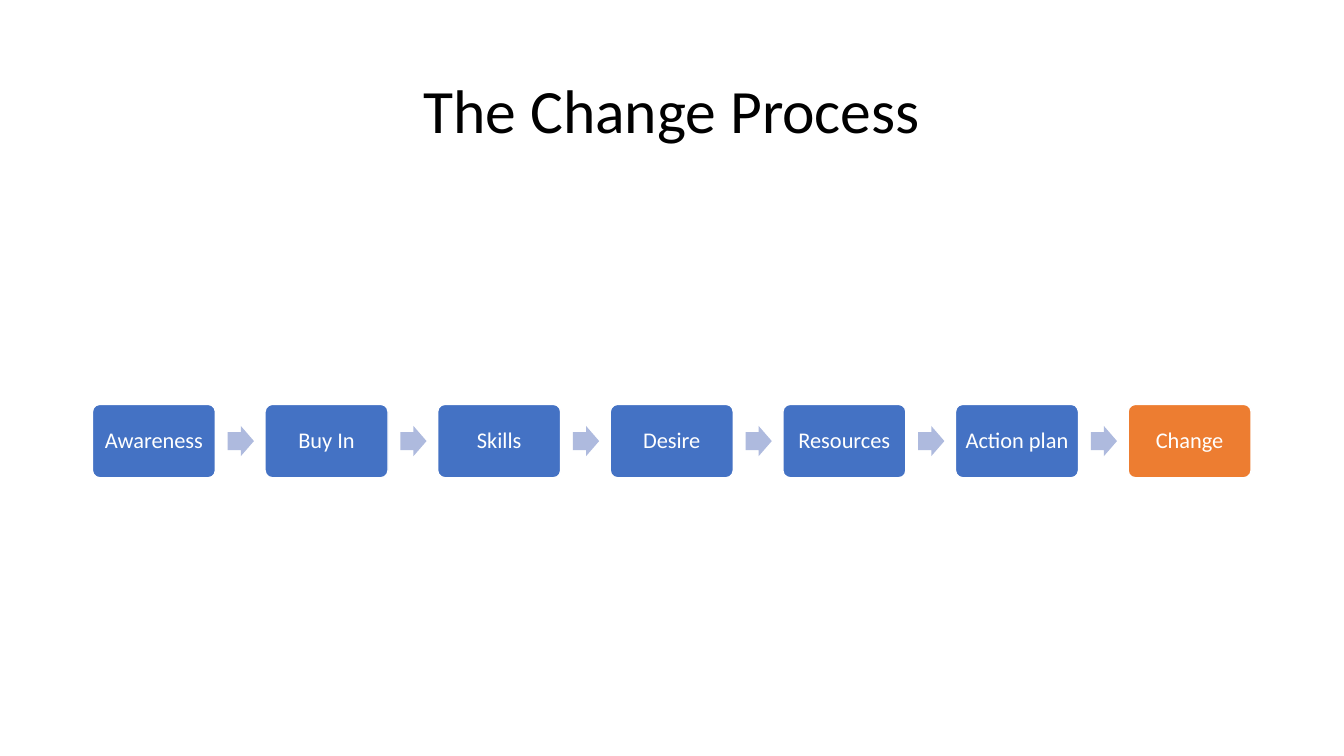
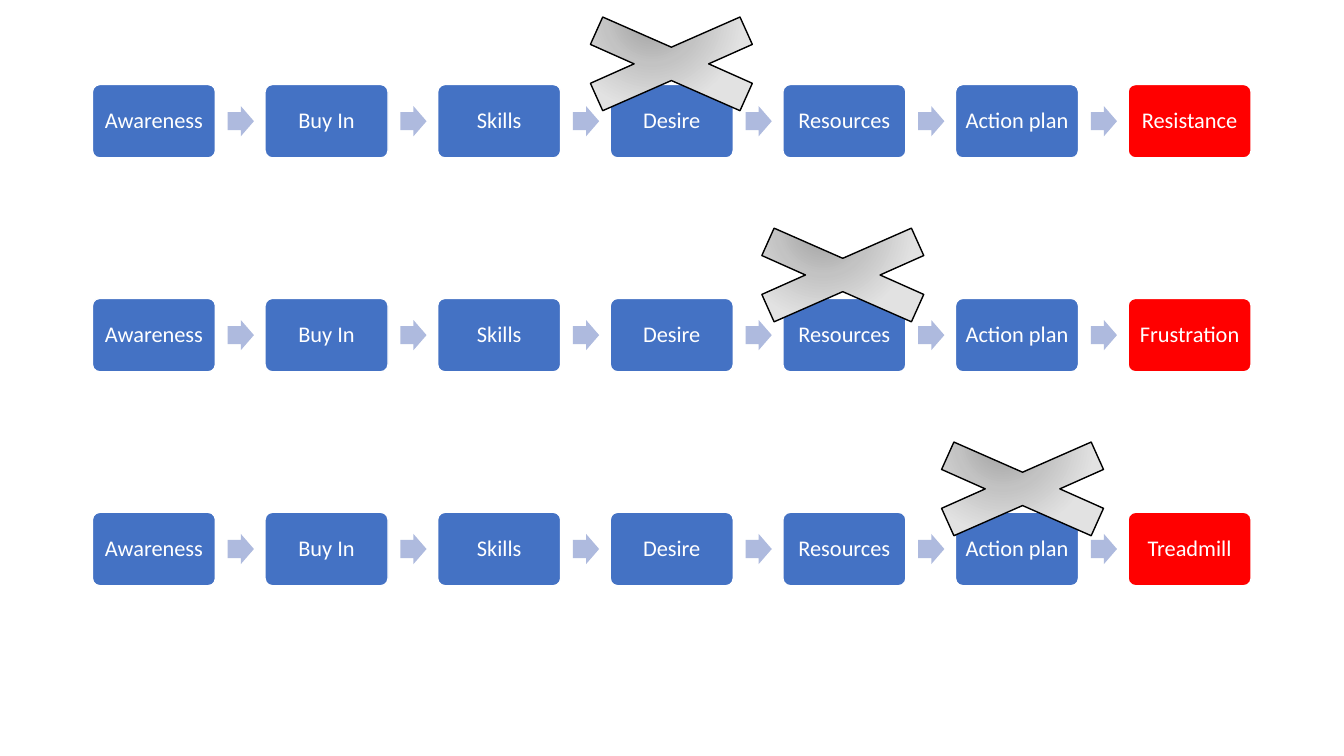
"""Build two slides about the steps of a change process and what a missing step causes."""
import lxml.etree
import pptx
import pptx.dml.color
import pptx.enum.shapes
import pptx.enum.text
import pptx.oxml.ns
import pptx.util

Cm, Pt = pptx.util.Cm, pptx.util.Pt
SHAPE = pptx.enum.shapes.MSO_SHAPE
MIDDLE = pptx.enum.text.MSO_ANCHOR.MIDDLE
CENTER = pptx.enum.text.PP_ALIGN.CENTER

TITLE = "The Change Process"
STEPS = ["Awareness", "Buy In", "Skills", "Desire", "Resources", "Action plan"]
SUCCESS = "Change"
FAILURES = [
    {"result": "Resistance", "cross": (16.92, 1.61)},
    {"result": "Frustration", "cross": (21.24, 6.93)},
    {"result": "Treadmill", "cross": (25.77, 12.32)},
]

COLORS = {
    "step": "4472C4", "arrow": "AEBADE", "success": "ED7D31", "failure": "FF0000",
    "white": "FFFFFF", "black": "000000",
}
CROSS_STOPS = [(0, "9C9C9C"), (50, "C3C3C3"), (100, "E2E2E2")]
CROSS_FOCUS = {"l": 38, "t": -20, "r": 62, "b": 120}
CROSS_POINTS = [
    (-2.04, -0.49), (-1.73, -1.18), (0, -0.42), (1.73, -1.18), (2.04, -0.49), (0.94, 0),
    (2.04, 0.49), (1.73, 1.18), (0, 0.42), (-1.73, 1.18), (-2.04, 0.49), (-0.94, 0),
]

FONT = "Calibri"
LEFT, PITCH = 2.33, 4.35
BOX_W, BOX_H = 3.1, 1.85
ARROW_X, ARROW_W, ARROW_H = 3.41, 0.66, 0.76
PROCESS_TOP = 10.19
FAILURE_TOP, FAILURE_PITCH = 2.13, 5.39


def rgb(name):
    return pptx.dml.color.RGBColor.from_string(COLORS[name])


def write(sp, text, size, color, inset):
    tf = sp.text_frame
    tf.word_wrap = True
    tf.auto_size = pptx.enum.text.MSO_AUTO_SIZE.NONE
    tf.vertical_anchor = MIDDLE
    tf.margin_left = tf.margin_right = tf.margin_top = tf.margin_bottom = Cm(inset)
    p = tf.paragraphs[0]
    p.alignment = CENTER
    p.line_spacing = 0.9
    r = p.add_run()
    r.text = text
    r.font.size = Pt(size)
    r.font.name = FONT
    r.font.color.rgb = rgb(color)


def add_filled(shapes, kind, box, fill):
    sp = shapes.add_shape(kind, *(Cm(v) for v in box))
    sp.shadow.inherit = False
    sp.fill.solid()
    sp.fill.fore_color.rgb = rgb(fill)
    return sp


def add_process(slide, top, result, result_color):
    shapes = slide.shapes.add_group_shape().shapes
    labels = [(step, "step") for step in STEPS] + [(result, result_color)]
    for i, (label, color) in enumerate(labels):
        x = LEFT + i * PITCH
        sp = add_filled(shapes, SHAPE.ROUNDED_RECTANGLE, (x, top, BOX_W, BOX_H), color)
        sp.adjustments[0] = 0.1
        sp.line.color.rgb = rgb("white")
        sp.line.width = Pt(1)
        write(sp, label, 16, "white", 0.18)
        if i < len(STEPS):
            arrow_top = top + (BOX_H - ARROW_H) / 2
            arrow = add_filled(shapes, SHAPE.RIGHT_ARROW,
                               (x + ARROW_X, arrow_top, ARROW_W, ARROW_H), "arrow")
            arrow.adjustments[0] = 0.6
            arrow.line.fill.background()


def fill_radial(sp):
    qn = pptx.oxml.ns.qn
    sp.fill.background()
    props = sp.element.spPr
    grad = lxml.etree.Element(qn("a:gradFill"), rotWithShape="1")
    stops = lxml.etree.SubElement(grad, qn("a:gsLst"))
    for pos, color in CROSS_STOPS:
        stop = lxml.etree.SubElement(stops, qn("a:gs"), pos=str(pos * 1000))
        lxml.etree.SubElement(stop, qn("a:srgbClr"), val=color)
    circle = lxml.etree.SubElement(grad, qn("a:path"), {"path": "circle"})
    focus = {side: str(v * 1000) for side, v in CROSS_FOCUS.items()}
    lxml.etree.SubElement(circle, qn("a:fillToRect"), focus)
    props.replace(props.find(qn("a:noFill")), grad)


def add_cross(slide, center):
    cx, cy = center
    points = [(Cm(cx + dx), Cm(cy + dy)) for dx, dy in CROSS_POINTS]
    builder = slide.shapes.build_freeform(*points[0])
    builder.add_line_segments(points[1:], close=True)
    sp = builder.convert_to_shape()
    sp.shadow.inherit = False
    sp.line.color.rgb = rgb("black")
    sp.line.width = Pt(1)
    fill_radial(sp)


def main():
    prs = pptx.Presentation()
    prs.slide_width, prs.slide_height = Cm(33.87), Cm(19.05)

    slide = prs.slides.add_slide(prs.slide_layouts[5])
    title = slide.shapes.title
    title.left, title.top, title.width, title.height = Cm(2.33), Cm(1.01), Cm(29.21), Cm(3.68)
    write(title, TITLE, 44, "black", 0.13)
    add_process(slide, PROCESS_TOP, SUCCESS, "success")

    slide = prs.slides.add_slide(prs.slide_layouts[6])
    for i, failure in enumerate(FAILURES):
        add_process(slide, FAILURE_TOP + i * FAILURE_PITCH, failure["result"], "failure")
    for failure in FAILURES:
        add_cross(slide, failure["cross"])

    prs.save("out.pptx")


if __name__ == "__main__":
    main()
